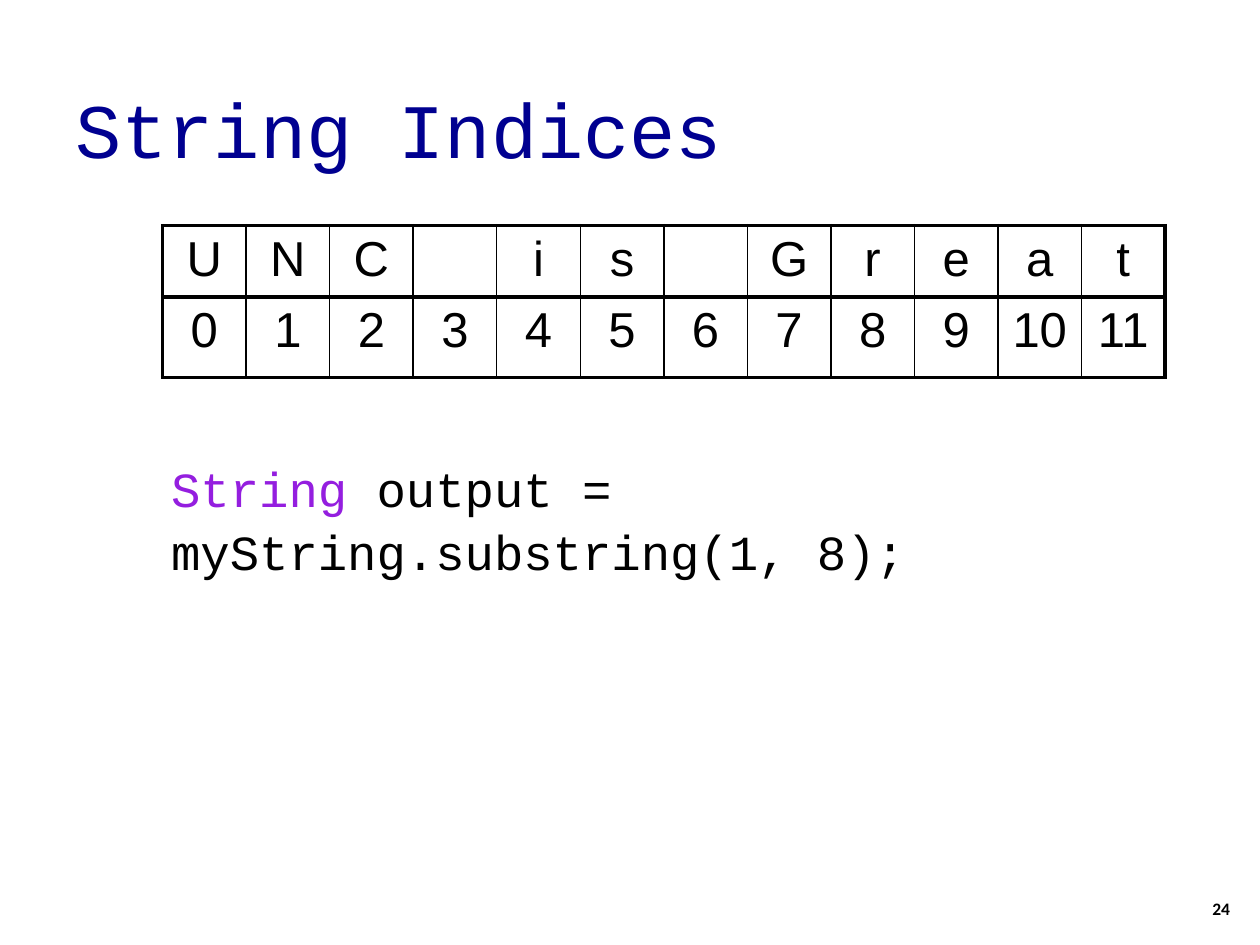
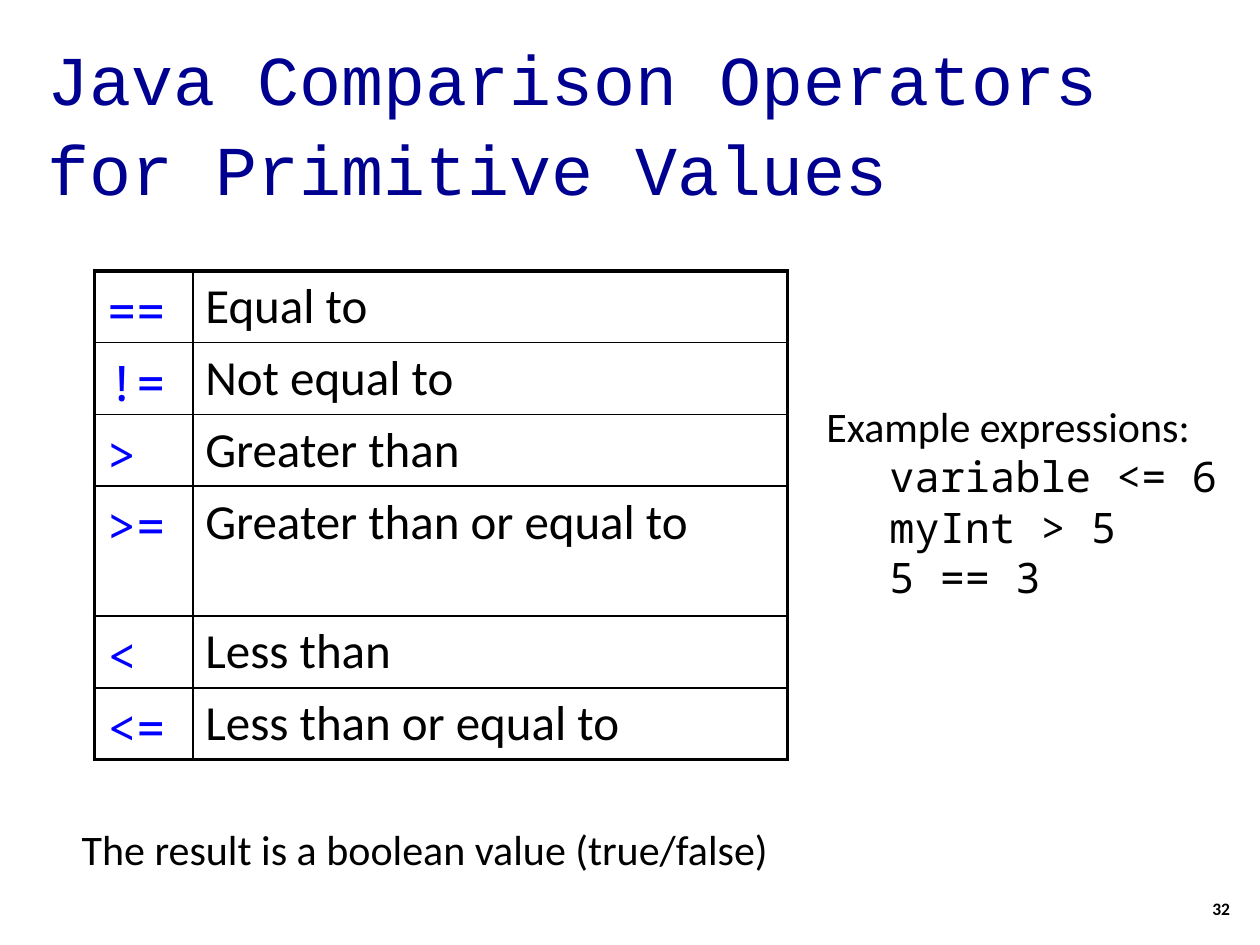
from lxml.etree import SubElement as Sub
from pptx import Presentation
from pptx.dml.color import RGBColor
from pptx.enum.text import MSO_ANCHOR as Anchor, PP_ALIGN as Align
from pptx.oxml.ns import qn
from pptx.util import Inches, Pt

NAVY = RGBColor(0x00, 0x00, 0x90)
BLUE = RGBColor(0x00, 0x00, 0xFF)
PURPLE = RGBColor(0x94, 0x1E, 0xDF)
BLACK = RGBColor(0x00, 0x00, 0x00)
CODE, BODY, MONO, SANS = "Courier New", "Calibri", "Noto Sans Mono", "Arial"
WIDTH, HEIGHT = Inches(10), Inches(7.5)
COLS, ROWS = 100, 75
THIN, THICK = Pt(1), Pt(2.25)
LEAD = 1.07
PHRASE = "UNC is Great"
SIGNS = [
    ("==", "Equal to"),
    ("!=", "Not equal to"),
    (">", "Greater than"),
    (">=", "Greater than or equal to"),
    ("<", "Less than"),
    ("<=", "Less than or equal to"),
]


def across(cols):
    """Return the length of a number of grid columns."""
    return int(WIDTH * cols / COLS)


def down(rows):
    """Return the length of a number of grid rows."""
    return int(HEIGHT * rows / ROWS)


def place(left, top, wide, high):
    """Turn grid columns and rows into a position and size."""
    return across(left), down(top), across(wide), down(high)


def style(para, face, size, color=BLACK, bold=False):
    """Format every run of a paragraph."""
    for run in para.runs:
        font = run.font
        font.name, font.size, font.bold = face, Pt(size), bold
        font.color.rgb = color


def add_text(slide, spot, text, face, size, color=BLACK, bold=False, wrap=True):
    """Add a text box and return its frame."""
    frame = slide.shapes.add_textbox(*place(*spot)).text_frame
    frame.word_wrap = wrap
    frame.text = text
    for para in frame.paragraphs:
        style(para, face, size, color, bold)
    return frame


def add_title(slide, spot, text, size):
    """Add a navy code-style title."""
    frame = add_text(slide, spot, text, CODE, size, NAVY)
    frame.vertical_anchor = Anchor.MIDDLE
    frame.margin_top = down(1.7)
    frame.paragraphs[0].line_spacing = LEAD


def add_page(slide, number):
    """Add the page number in the lower right corner."""
    frame = add_text(slide, (94.6, 70.1, 4, 4), str(number), BODY, 10, bold=True)
    frame.vertical_anchor = Anchor.MIDDLE
    frame.paragraphs[0].alignment = Align.RIGHT


def add_code(slide, spot, kind, rest):
    """Add a line of code that starts with a coloured type name."""
    frame = add_text(slide, spot, kind, CODE, 28)
    frame.margin_top = down(1.3)
    para = frame.paragraphs[0]
    para.line_spacing = LEAD
    para.add_run().text = rest
    style(para, CODE, 28)
    para.runs[0].font.color.rgb = PURPLE


def add_lines(slide, spot, head, lines):
    """Add a heading with indented code lines below it."""
    frame = add_text(slide, spot, "\n".join([head, *lines]), BODY, 24)
    for para in frame.paragraphs[1:]:
        style(para, MONO, 24)
        para._p.get_or_add_pPr().set("marL", str(across(5)))


def set_edges(cell, thick):
    """Draw the four cell borders, thick on the named sides."""
    props = cell._tc.get_or_add_tcPr()
    for side in "LRTB":
        line = Sub(props, qn(f"a:ln{side}"), w=str(THICK if side in thick else THIN))
        fill = Sub(line, qn("a:solidFill"))
        Sub(fill, qn("a:srgbClr"), val=str(BLACK))
    cell.fill.background()


def add_grid(slide, left, top, data, widths, heights, looks, align, ruled=False):
    """Add a framed table, with thick lines between rows if ruled."""
    spot = place(left, top, sum(widths), sum(heights))
    grid = slide.shapes.add_table(len(data), len(widths), *spot).table
    grid.first_row = grid.horz_banding = False
    for col, wide in zip(grid.columns, widths):
        col.width = across(wide)
    for row, high in zip(grid.rows, heights):
        row.height = down(high)
    for y, row in enumerate(data):
        for x, text in enumerate(row):
            cell = grid.cell(y, x)
            cell.text = text
            para = cell.text_frame.paragraphs[0]
            para.alignment = align
            face, color = looks[x % len(looks)]
            style(para, face, 28, color)
            edges = {
                "L": x == 0,
                "R": x == len(widths) - 1,
                "T": ruled or y == 0,
                "B": ruled or y == len(data) - 1,
            }
            set_edges(cell, [side for side, on in edges.items() if on])


def index_slide(slide):
    """Build the slide on string indices."""
    add_title(slide, (5, 3, 90, 12.5), "String Indices", 44)
    add_page(slide, 24)
    count = len(PHRASE)
    data = [[char.strip() for char in PHRASE], [str(n) for n in range(count)]]
    add_grid(slide, 12.9, 17.9, data, [79.6 / count] * count, [5.3, 6.4],
             [(SANS, BLACK)], Align.CENTER, ruled=True)
    add_code(slide, (12.6, 34.8, 71.5, 5.7), "String",
             " output = myString.substring(1, 8);")


def sign_slide(slide):
    """Build the slide on comparison operators."""
    add_title(slide, (2.8, 4.7, 93, 8.4),
              "Java Comparison Operators for Primitive Values", 40)
    add_page(slide, 32)
    heights = [5.7] * len(SIGNS)
    heights[3] = 10.3
    add_grid(slide, 7.5, 21.5, SIGNS, [7.8, 47.2], heights,
             [(MONO, BLUE), (BODY, BLACK)], Align.LEFT)
    add_lines(slide, (64.6, 31.3, 35.8, 17.2), "Example expressions:",
              ["variable <= 6", "myInt > 5", "5 == 3"])
    add_text(slide, (5.5, 64.9, 57, 5),
             "The result is a boolean value (true/false)", BODY, 24, wrap=False)


def main():
    """Build and save the slides."""
    deck = Presentation()
    deck.slide_width, deck.slide_height = WIDTH, HEIGHT
    blank = deck.slide_layouts[6]
    for build in (index_slide, sign_slide):
        build(deck.slides.add_slide(blank))
    deck.save("out.pptx")


if __name__ == "__main__":
    main()
